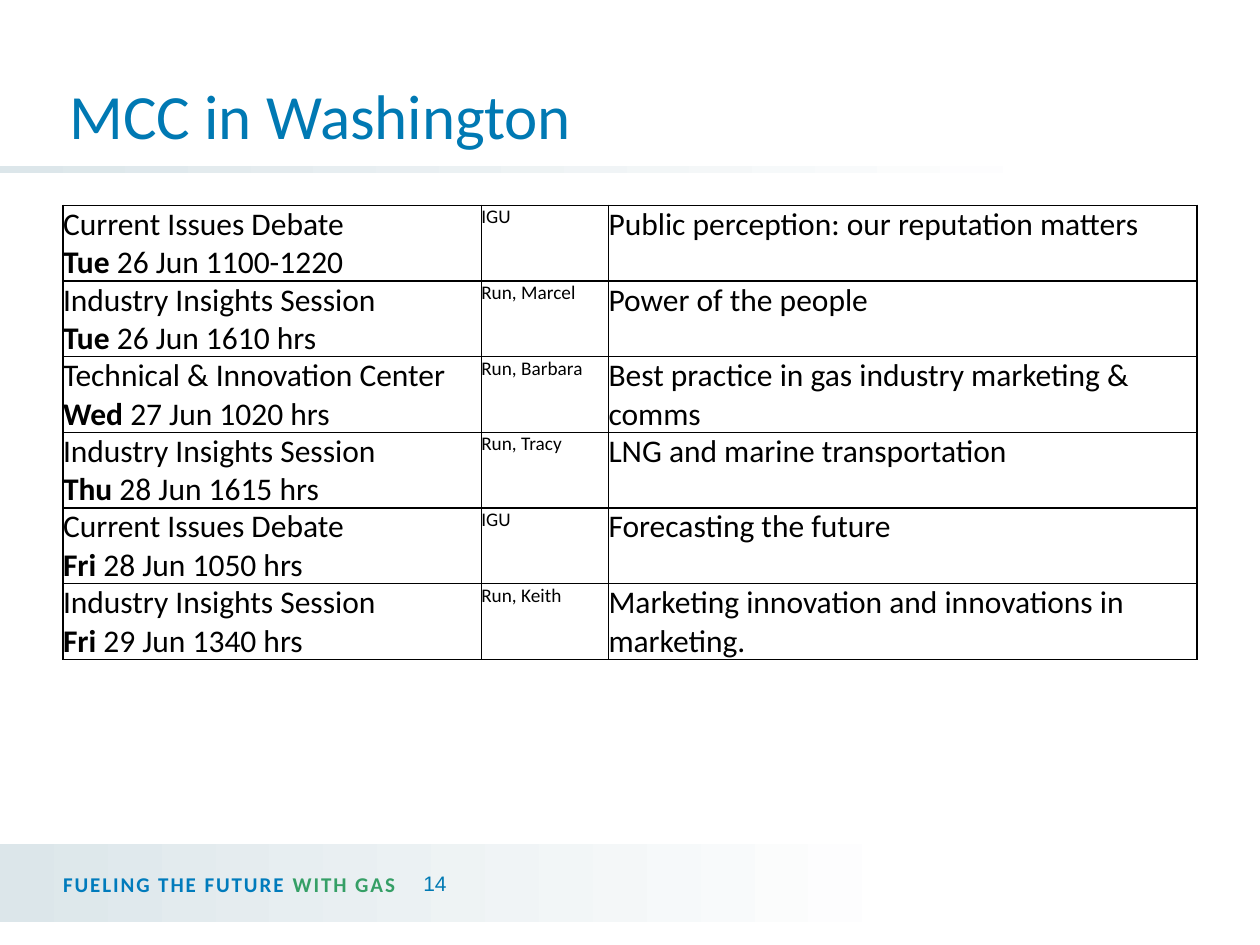
from lxml.etree import SubElement
from pptx import Presentation
from pptx.dml.color import RGBColor
from pptx.enum.shapes import MSO_SHAPE
from pptx.enum.text import MSO_ANCHOR, PP_ALIGN
from pptx.oxml.ns import qn
from pptx.util import Inches, Pt

WIDE, HIGH = 10, 7.5
EDGE = WIDE * 0.05
HUES = {
    "title": "0079B3",
    "blue": "007BBC",
    "green": "359F66",
    "mist": "DCE6EA",
    "white": "FFFFFF",
    "ink": "000000",
}
COLS = [3.32, 1.01, 4.67]
ROW = 0.6
TALKS = [
    ("Current Issues Debate", "Tue", "26 Jun 1100-1220", "IGU",
     "Public perception: our reputation matters"),
    ("Industry Insights Session", "Tue", "26 Jun 1610 hrs", "Run, Marcel",
     "Power of the people"),
    ("Technical & Innovation Center", "Wed", "27 Jun 1020 hrs", "Run, Barbara",
     "Best practice in gas industry marketing & comms"),
    ("Industry Insights Session", "Thu", "28 Jun 1615 hrs", "Run, Tracy",
     "LNG and marine transportation"),
    ("Current Issues Debate", "Fri", "28 Jun 1050 hrs", "IGU",
     "Forecasting the future"),
    ("Industry Insights Session", "Fri", "29 Jun 1340 hrs", "Run, Keith",
     "Marketing innovation and innovations in marketing."),
]


def hue(name):
    """Return the named colour."""
    return RGBColor.from_string(HUES[name])


def style(font, size, color, face="Calibri"):
    """Set the face, size and colour of a font."""
    font.name, font.size = face, Pt(size)
    font.color.rgb = hue(color)


def inset(box, gap):
    """Give a frame or cell equal margins."""
    box.margin_left = box.margin_right = Inches(gap)
    box.margin_top = box.margin_bottom = Inches(gap)


def add_band(slide, top, width, height, end):
    """Draw a band that fades to white at the right."""
    band = slide.shapes.add_shape(
        MSO_SHAPE.RECTANGLE, 0, Inches(top), Inches(width), Inches(height))
    band.shadow.inherit = False
    band.line.fill.background()
    band.fill.gradient()
    band.fill.gradient_angle = 0
    for stop, place, color in zip(
            band.fill.gradient_stops, (0, end), ("mist", "white")):
        stop.position = place
        stop.color.rgb = hue(color)


def add_title(slide, text):
    """Place and format the title."""
    title = slide.shapes.title
    title.left, title.top = Inches(EDGE), Inches(0.01)
    title.width, title.height = Inches(WIDE - 2 * EDGE), Inches(1.25)
    frame = title.text_frame
    frame.text = text
    frame.vertical_anchor = MSO_ANCHOR.BOTTOM
    inset(frame, 0.05)
    line = frame.paragraphs[0]
    line.alignment = PP_ALIGN.LEFT
    style(line.font, 36, "title")


def add_label(slide, left, top, width, height, gap, wrap):
    """Add a text box centred in height and return its paragraph."""
    box = slide.shapes.add_textbox(
        Inches(left), Inches(top), Inches(width), Inches(height))
    frame = box.text_frame
    frame.word_wrap = wrap
    frame.vertical_anchor = MSO_ANCHOR.MIDDLE
    inset(frame, gap)
    return frame.paragraphs[0]


def add_motto(slide):
    """Write the spaced two-colour footer motto."""
    line = add_label(slide, EDGE, 6.82, 2.81, 0.39, 0, True)
    for text, color in (("FUELING THE FUTURE ", "blue"), ("WITH GAS", "green")):
        run = line.add_run()
        run.text = text
        style(run.font, 12, color)
        run.font.bold = True
        run.font._element.set("spc", "110")


def add_number(slide, text):
    """Write the page number."""
    line = add_label(slide, 3.31, 6.86, 0.29, 0.29, 0.05, False)
    line.text = text
    style(line.font, 12, "title", "Arial")


def rule_cell(cell):
    """Give a cell thin black borders and a white fill."""
    props = cell._tc.get_or_add_tcPr()
    for side in ("lnL", "lnR", "lnT", "lnB"):
        line = SubElement(props, qn(f"a:{side}"), w=str(Pt(1)))
        fill = SubElement(line, qn("a:solidFill"))
        SubElement(fill, qn("a:srgbClr"), val=HUES["ink"])
    cell.fill.solid()
    cell.fill.fore_color.rgb = hue("white")


def fill_cell(cell, text, size):
    """Write the text of a cell and format it."""
    inset(cell, 0)
    rule_cell(cell)
    cell.text_frame.text = text
    for line in cell.text_frame.paragraphs:
        style(line.font, size, "ink")


def add_talks(slide):
    """Build the table of sessions."""
    table = slide.shapes.add_table(
        len(TALKS), len(COLS), Inches(EDGE), Inches(1.63),
        Inches(sum(COLS)), Inches(ROW * len(TALKS))).table
    table.first_row = table.horz_banding = False
    for col, width in zip(table.columns, COLS):
        col.width = Inches(width)
    for row, (kind, day, time, host, topic) in zip(table.rows, TALKS):
        slot, lead, theme = row.cells
        fill_cell(slot, f"{kind}\n{day}", 18)
        when = slot.text_frame.paragraphs[1]
        when.runs[0].font.bold = True
        when.add_run().text = f" {time}"
        fill_cell(lead, host, 11)
        fill_cell(theme, topic, 18)


def main():
    """Build and save the slide."""
    deck = Presentation()
    deck.slide_width, deck.slide_height = Inches(WIDE), Inches(HIGH)
    slide = deck.slides.add_slide(deck.slide_layouts[5])
    add_band(slide, 6.7, 7.42, 0.62, 0.98)
    add_band(slide, 1.32, 9.5, 0.05, 0.89)
    add_title(slide, "MCC in Washington")
    add_motto(slide)
    add_talks(slide)
    add_number(slide, "14")
    deck.save("out.pptx")


if __name__ == "__main__":
    main()
